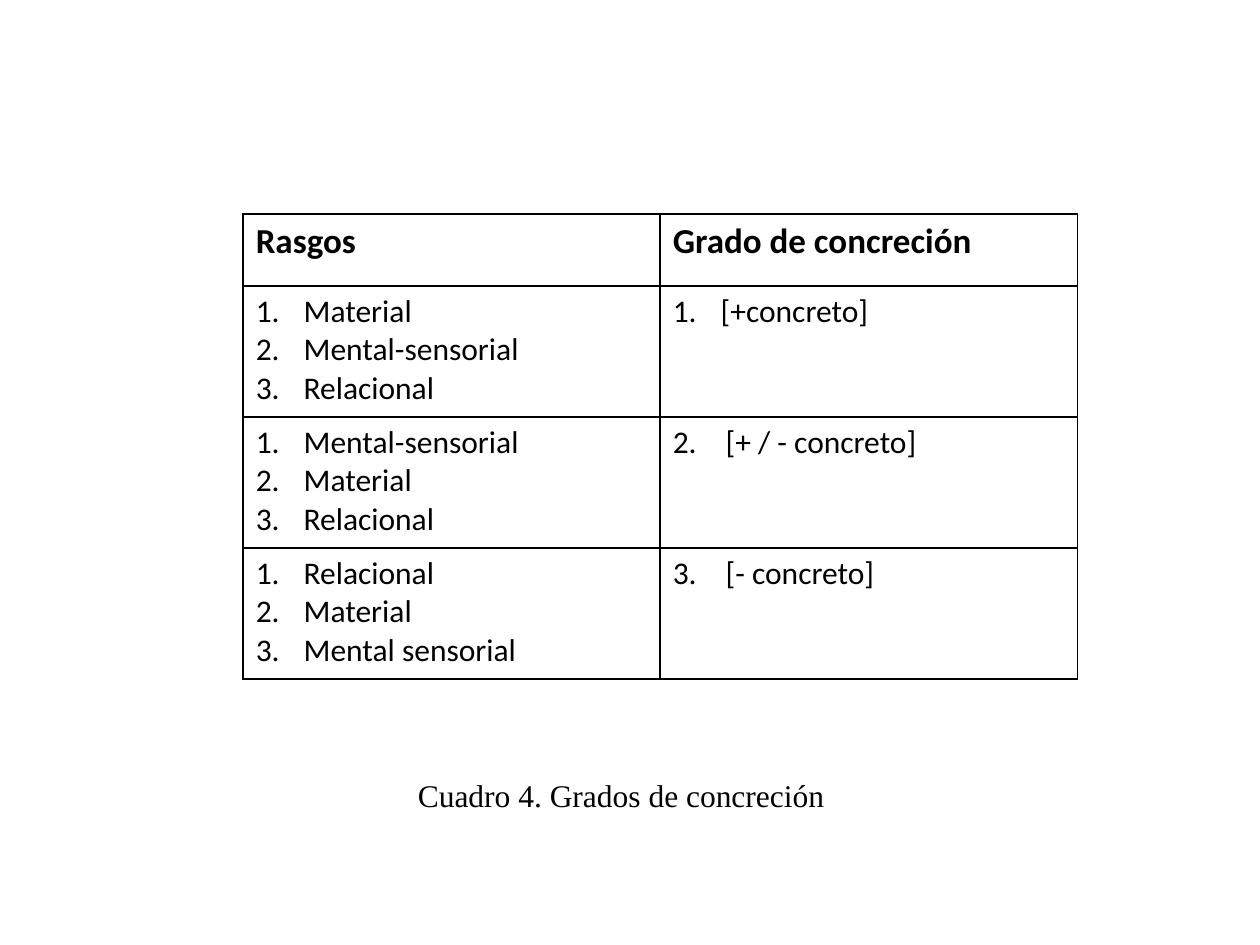
from dataclasses import dataclass

from lxml import etree
from pptx import Presentation
from pptx.dml.color import RGBColor
from pptx.enum.text import MSO_AUTO_SIZE, PP_ALIGN
from pptx.oxml.ns import qn
from pptx.util import Inches, Pt

CENTER = PP_ALIGN.CENTER
FIT_SHAPE = MSO_AUTO_SIZE.SHAPE_TO_FIT_TEXT


@dataclass(frozen=True)
class Theme:
    ink: RGBColor = RGBColor(0, 0, 0)
    table_font: str = "Calibri"
    caption_font: str = "Times New Roman"
    header_size: int = 20
    body_size: int = 18
    border_width: int = 1
    list_indent: float = 0.38
    typed_indent: float = 0.42


THEME = Theme()
HEADERS = ("Rasgos", "Grado de concreción")
# Each row: ranked features, degree, and whether the degree is auto-numbered.
ROWS = (
    (("Material", "Mental-sensorial", "Relacional"), "[+concreto]", True),
    (("Mental-sensorial", "Material", "Relacional"), "2.\t[+ / - concreto]", False),
    (("Relacional", "Material", "Mental sensorial"), "3.\t[- concreto]", False),
)
HEADER_HEIGHT = 0.57
ROW_HEIGHT = 1.04


def add_run(paragraph, text, font, size, bold=False):
    run = paragraph.add_run()
    run.text = text
    run.font.name = font
    run.font.size = Pt(size)
    run.font.bold = bold
    run.font.color.rgb = THEME.ink


def hang(paragraph, indent, numbered):
    """Give a paragraph a hanging indent and, if asked, automatic numbers."""
    properties = paragraph._p.get_or_add_pPr()
    properties.set("marL", str(Inches(indent)))
    properties.set("indent", str(-Inches(indent)))
    if numbered:
        etree.SubElement(properties, qn("a:buAutoNum"), type="arabicPeriod")


def style_cell(cell):
    """Draw all four borders, with no fill."""
    properties = cell._tc.get_or_add_tcPr()
    for side in ("lnL", "lnR", "lnT", "lnB"):
        line = etree.SubElement(properties, qn(f"a:{side}"), w=str(Pt(THEME.border_width)))
        fill = etree.SubElement(line, qn("a:solidFill"))
        etree.SubElement(fill, qn("a:srgbClr"), val=str(THEME.ink))
    cell.fill.background()


def fill_list(cell, items, indent, numbered):
    frame = cell.text_frame
    for index, item in enumerate(items):
        paragraph = frame.add_paragraph() if index else frame.paragraphs[0]
        hang(paragraph, indent, numbered)
        add_run(paragraph, item, THEME.table_font, THEME.body_size)


def add_degree_table(slide, left, top, width, height):
    table = slide.shapes.add_table(
        len(ROWS) + 1, len(HEADERS), left, top, width, height).table
    table.first_row = False
    table.horz_banding = False
    for column in table.columns:
        column.width = width // len(HEADERS)
    for index, row in enumerate(table.rows):
        row.height = Inches(ROW_HEIGHT if index else HEADER_HEIGHT)
    for cell in table.iter_cells():
        style_cell(cell)

    for column, header in enumerate(HEADERS):
        paragraph = table.cell(0, column).text_frame.paragraphs[0]
        add_run(paragraph, header, THEME.table_font, THEME.header_size, bold=True)
    for row, (features, degree, numbered) in enumerate(ROWS, start=1):
        fill_list(table.cell(row, 0), features, THEME.list_indent, True)
        indent = THEME.list_indent if numbered else THEME.typed_indent
        fill_list(table.cell(row, 1), (degree,), indent, numbered)


def add_caption(slide, left, top, width, height):
    frame = slide.shapes.add_textbox(left, top, width, height).text_frame
    frame.word_wrap = False
    frame.auto_size = FIT_SHAPE
    paragraph = frame.paragraphs[0]
    paragraph.alignment = CENTER
    add_run(paragraph, "Cuadro 4. Grados de concreción",
            THEME.caption_font, THEME.body_size)


def main():
    presentation = Presentation()
    presentation.slide_width = Inches(10)
    presentation.slide_height = Inches(7.5)
    slide = presentation.slides.add_slide(presentation.slide_layouts[6])
    add_caption(slide, Inches(3.2), Inches(6.11), Inches(3.46), Inches(0.4))
    add_degree_table(slide, Inches(1.93), Inches(1.7), Inches(6.62),
                     Inches(HEADER_HEIGHT + ROW_HEIGHT * len(ROWS)))
    presentation.save("out.pptx")


if __name__ == "__main__":
    main()
